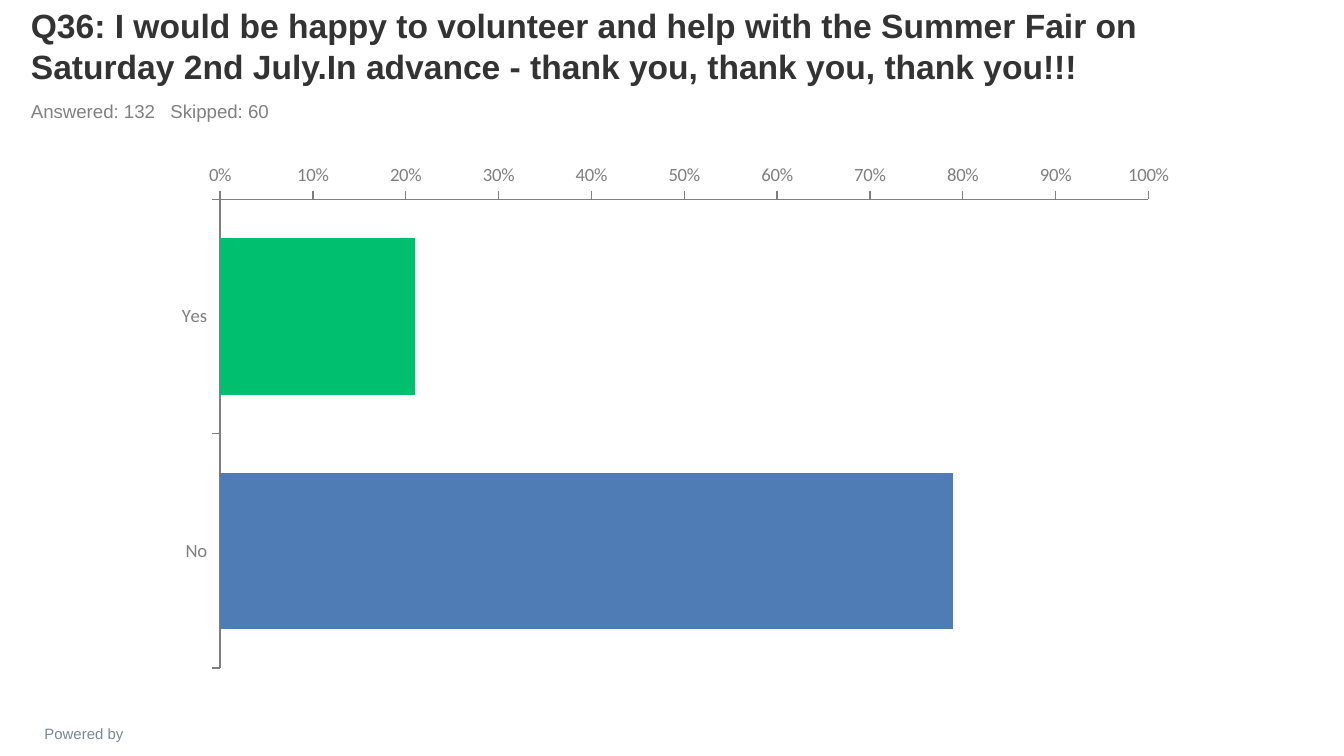
from dataclasses import dataclass

from pptx import Presentation
from pptx.chart.data import CategoryChartData
from pptx.dml.color import RGBColor
from pptx.enum.chart import XL_AXIS_CROSSES, XL_CHART_TYPE, XL_TICK_LABEL_POSITION, XL_TICK_MARK
from pptx.enum.text import MSO_ANCHOR, MSO_AUTO_SIZE, PP_ALIGN
from pptx.oxml.xmlchemy import OxmlElement
from pptx.util import Inches, Pt


@dataclass(frozen=True)
class Theme:
    text_font: str = "Arial"
    chart_font: str = "Calibri"
    title_size: int = 18
    subtitle_size: int = 10
    axis_size: int = 10
    footer_size: int = 8
    title: RGBColor = RGBColor.from_string("333333")
    subtitle: RGBColor = RGBColor.from_string("808080")
    footer: RGBColor = RGBColor.from_string("7C878E")
    axis: RGBColor = RGBColor.from_string("7F7F7F")
    yes: RGBColor = RGBColor.from_string("00BF6F")
    no: RGBColor = RGBColor.from_string("507CB6")


THEME = Theme()


def set_font(font, name, size, color, bold=False):
    font.name, font.size, font.bold = name, Pt(size), bold
    font.color.rgb = color


def place_text(shape, box, text, size, color, bold=False,
               align=PP_ALIGN.LEFT, anchor=MSO_ANCHOR.TOP):
    """Fill a placeholder or text box with one unbulleted paragraph."""
    shape.left, shape.top, shape.width, shape.height = map(Inches, box)
    frame = shape.text_frame
    frame.text = text
    frame.word_wrap = True
    frame.auto_size = MSO_AUTO_SIZE.NONE
    frame.vertical_anchor = anchor
    paragraph = frame.paragraphs[0]
    paragraph.alignment = align
    paragraph.space_before = Pt(0)
    properties = paragraph._p.get_or_add_pPr()
    properties.set("marL", "0")
    properties.set("indent", "0")
    properties.append(OxmlElement("a:buNone"))
    set_font(paragraph.font, THEME.text_font, size, color, bold)


def add_heading(slide, left, top, width):
    """Question with the response count below it."""
    title_height = 0.6
    place_text(slide.shapes.title, (left, top, width, title_height),
               "Q36: I would be happy to volunteer and help with the Summer Fair on "
               "Saturday 2nd July.In advance - thank you, thank you, thank you!!!",
               THEME.title_size, THEME.title, bold=True, anchor=MSO_ANCHOR.BOTTOM)
    place_text(slide.placeholders[1], (left, top + title_height, width, 0.26),
               "Answered: 132   Skipped: 60", THEME.subtitle_size, THEME.subtitle)


def style_axis(axis):
    axis.has_major_gridlines = False
    axis.major_tick_mark = XL_TICK_MARK.OUTSIDE
    axis.minor_tick_mark = XL_TICK_MARK.NONE
    axis.format.line.color.rgb = THEME.axis
    axis.format.line.width = Pt(0.75)
    set_font(axis.tick_labels.font, THEME.chart_font, THEME.axis_size, THEME.axis)


def add_answer_chart(slide, box):
    """Horizontal bars, one colour for each answer."""
    data = CategoryChartData(number_format="0%")
    data.categories = ["Yes", "No"]
    data.add_series("Series 1", [0.21, 0.79])
    chart = slide.shapes.add_chart(
        XL_CHART_TYPE.BAR_CLUSTERED, *map(Inches, box), data).chart
    chart.has_legend = False
    chart.has_title = False
    set_font(chart.font, THEME.chart_font, THEME.title_size, THEME.title)

    # Axes: first answer on top, percentages at the bottom
    answers, percentages = chart.category_axis, chart.value_axis
    style_axis(answers)
    style_axis(percentages)
    answers.reverse_order = True
    answers.crosses = XL_AXIS_CROSSES.MINIMUM
    answers.tick_label_position = XL_TICK_LABEL_POSITION.LOW
    percentages.minimum_scale, percentages.maximum_scale = 0, 1
    percentages.major_unit = 0.1
    percentages.tick_labels.number_format = "0%"
    percentages.tick_labels.number_format_is_linked = False

    # Bars
    plot = chart.plots[0]
    plot.gap_width, plot.overlap = 50, 100
    plot.vary_by_categories = False
    series = plot.series[0]
    series.invert_if_negative = False
    for target, color in ((series, THEME.yes), (series.points[0], THEME.yes),
                          (series.points[1], THEME.no)):
        fill = target.format.fill
        fill.solid()
        fill.fore_color.rgb = color


def add_footer(slide, box):
    shape = slide.shapes.add_textbox(*map(Inches, box))
    place_text(shape, box, "Powered by", THEME.footer_size, THEME.footer,
               align=PP_ALIGN.CENTER)


def main():
    presentation = Presentation()
    # Widescreen, 16:9
    presentation.slide_width = Inches(10)
    presentation.slide_height = Inches(10) * 9 // 16
    slide = presentation.slides.add_slide(presentation.slide_layouts[1])
    add_heading(slide, 0.13, 0.09, 9)
    add_answer_chart(slide, (1.2, 1.15, 7.65, 3.9))
    add_footer(slide, (0.05, 5.34, 1.15, 0.18))
    presentation.save("out.pptx")


if __name__ == "__main__":
    main()
